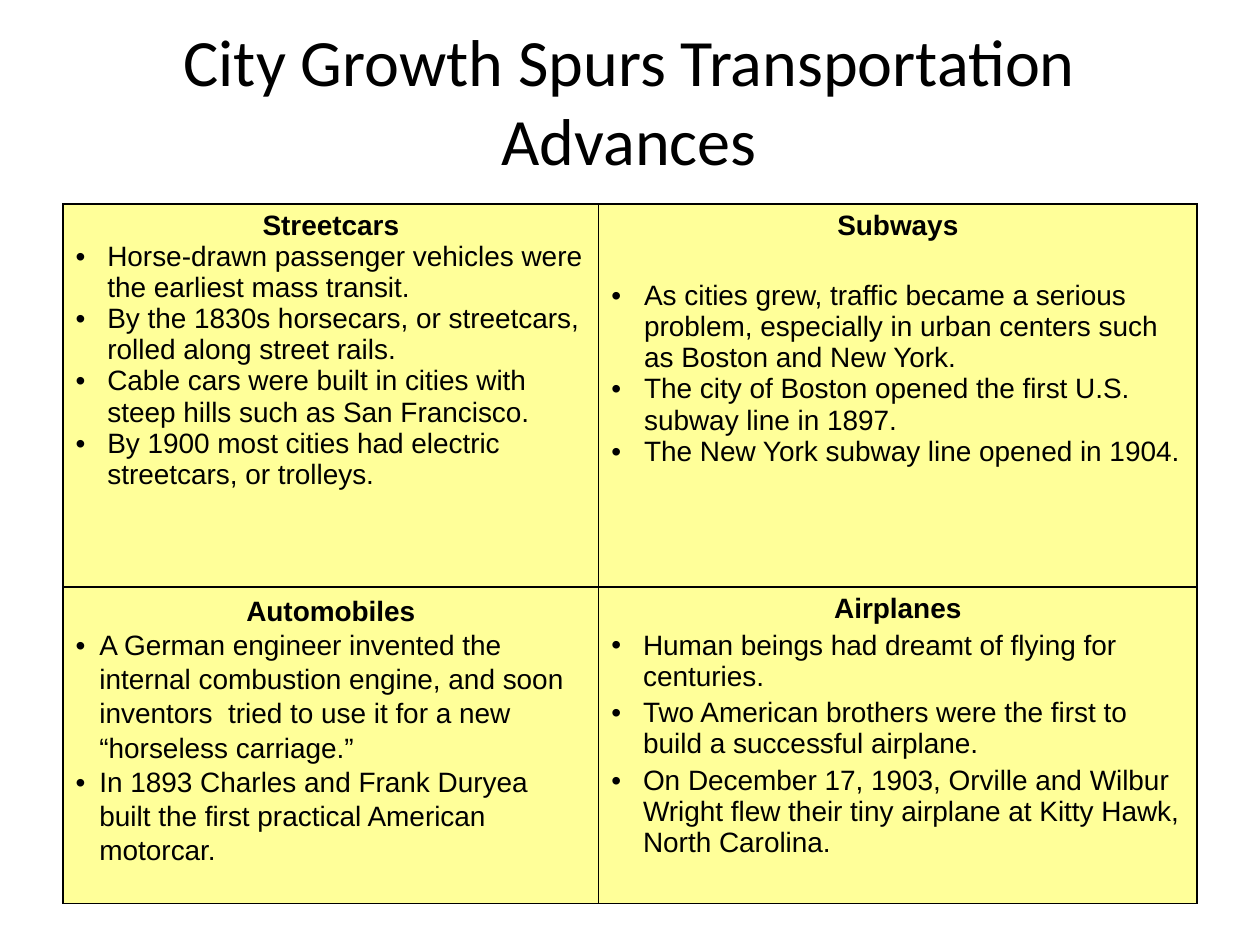
from lxml import etree
from pptx import Presentation
from pptx.dml.color import RGBColor
from pptx.enum.text import MSO_ANCHOR, PP_ALIGN
from pptx.oxml.ns import qn
from pptx.util import Cm, Pt

CENTER, LEFT = PP_ALIGN.CENTER, PP_ALIGN.LEFT
MIDDLE = MSO_ANCHOR.MIDDLE
BLACK = RGBColor(0x00, 0x00, 0x00)
YELLOW = RGBColor(0xFF, 0xFF, 0x99)

TITLE = "City Growth Spurs Transportation Advances"
COLUMN_WIDTHS = (Cm(10.8), Cm(12.06))
ROW_HEIGHTS = (Cm(7.72), Cm(6.38))

# heading, bullets, indent, line spacing, space before first bullet, space before others
TOPICS = [
    [
        ("Streetcars", [
            "Horse-drawn passenger vehicles were the earliest mass transit.",
            "By the 1830s horsecars, or streetcars, rolled along street rails.",
            "Cable cars were built in cities with steep hills such as San Francisco.",
            "By 1900 most cities had electric streetcars, or trolleys.",
        ], Cm(0.64), 1.0, Pt(0), Pt(0)),
        ("Subways", [
            "As cities grew, traffic became a serious problem, especially in urban "
            "centers such as Boston and New York.",
            "The city of Boston opened the first U.S. subway line in 1897.",
            "The New York subway line opened in 1904.",
        ], Cm(0.66), 1.0, Pt(22.4), Pt(0)),
    ],
    [
        ("Automobiles", [
            "A German engineer invented the internal combustion engine, and soon "
            "inventors  tried to use it for a new “horseless carriage.”",
            "In 1893 Charles and Frank Duryea built the first practical American "
            "motorcar.",
        ], Cm(0.48), 1.1, Pt(0), Pt(0)),
        ("Airplanes", [
            "Human beings had dreamt of flying for centuries.",
            "Two American brothers were the first to build a successful airplane.",
            "On December 17, 1903, Orville and Wilbur Wright flew their tiny airplane "
            "at Kitty Hawk, North Carolina.",
        ], Cm(0.64), 1.0, Pt(3.2), Pt(3.2)),
    ],
]


def set_font(paragraph, name, size, bold=False):
    font = paragraph.font
    font.name = name
    font.size = size
    font.bold = bold
    font.color.rgb = BLACK


def add_title(slide):
    title = slide.shapes.title
    title.left, title.top, title.width, title.height = Cm(1.47), Cm(1.27), Cm(22.43), Cm(1.47)
    frame = title.text_frame
    frame.text = TITLE
    frame.word_wrap = True
    frame.vertical_anchor = MIDDLE
    paragraph = frame.paragraphs[0]
    paragraph.alignment = CENTER
    set_font(paragraph, "Calibri", Pt(37.8))


def set_borders(cell):
    properties = cell._tc.get_or_add_tcPr()
    for side in ("a:lnL", "a:lnR", "a:lnT", "a:lnB"):
        line = etree.SubElement(properties, qn(side), w=str(Pt(1)))
        fill = etree.SubElement(line, qn("a:solidFill"))
        etree.SubElement(fill, qn("a:srgbClr"), val=str(BLACK))


def set_bullet(paragraph, indent):
    properties = paragraph._p.get_or_add_pPr()
    properties.set("marL", str(indent))
    properties.set("indent", str(-indent))
    etree.SubElement(properties, qn("a:buFont"), typeface="Arial")
    etree.SubElement(properties, qn("a:buChar"), char="•")


def fill_cell(cell, heading, bullets, indent, spacing, first_gap, gap):
    set_borders(cell)
    cell.fill.solid()
    cell.fill.fore_color.rgb = YELLOW
    frame = cell.text_frame
    paragraph = frame.paragraphs[0]
    paragraph.text = heading
    paragraph.alignment = CENTER
    paragraph.line_spacing = spacing
    set_font(paragraph, "Arial", Pt(16), bold=True)
    for index, bullet in enumerate(bullets):
        paragraph = frame.add_paragraph()
        paragraph.text = bullet
        paragraph.alignment = LEFT
        set_bullet(paragraph, indent)
        paragraph.line_spacing = spacing
        paragraph.space_before = gap if index else first_gap
        set_font(paragraph, "Arial", Pt(16))


def add_topic_table(slide):
    frame = slide.shapes.add_table(
        len(ROW_HEIGHTS), len(COLUMN_WIDTHS), Cm(1.27), Cm(4.11),
        sum(COLUMN_WIDTHS), sum(ROW_HEIGHTS))
    table = frame.table
    table.first_row = False
    table.horz_banding = False
    for column, width in zip(table.columns, COLUMN_WIDTHS):
        column.width = width
    for row, height, topics in zip(table.rows, ROW_HEIGHTS, TOPICS):
        row.height = height
        for cell, topic in zip(row.cells, topics):
            fill_cell(cell, *topic)


def main():
    deck = Presentation()
    deck.slide_width, deck.slide_height = Cm(25.4), Cm(19.05)
    slide = deck.slides.add_slide(deck.slide_layouts[5])
    add_title(slide)
    add_topic_table(slide)
    deck.save("out.pptx")


if __name__ == "__main__":
    main()
